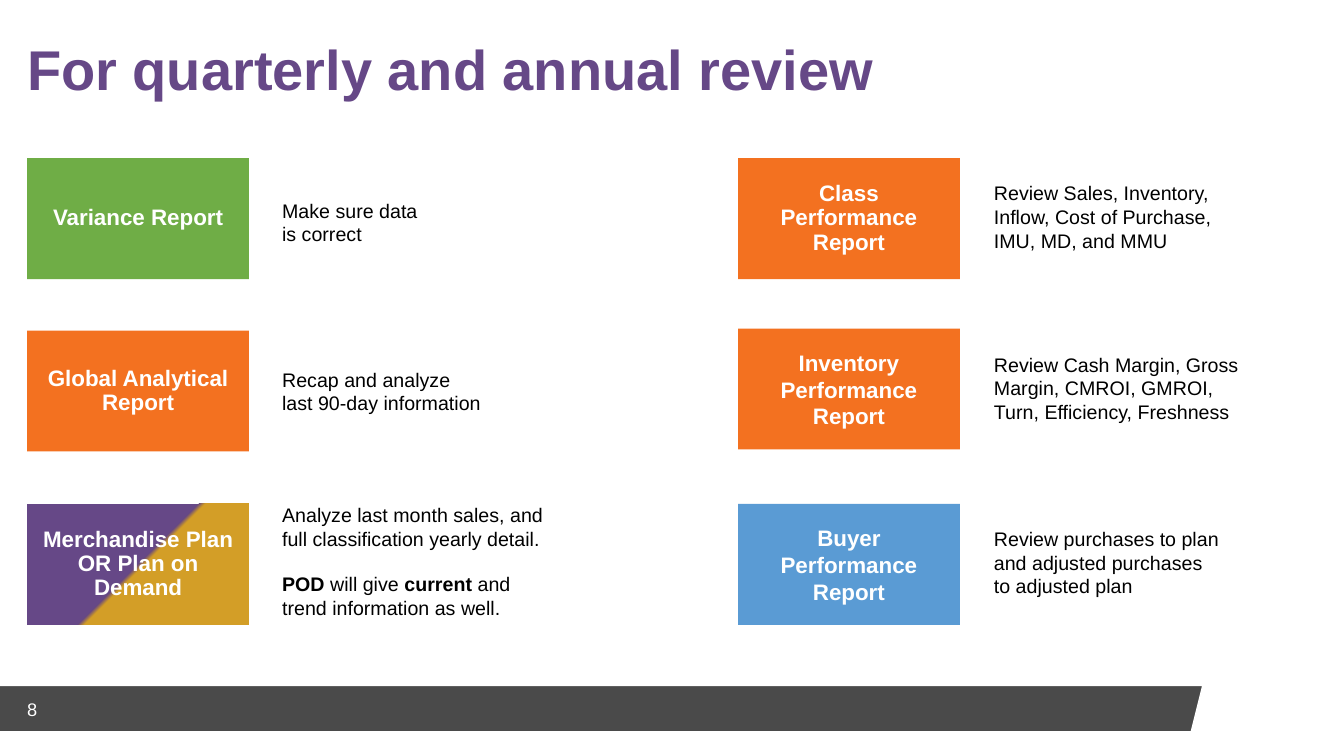
from copy import deepcopy
from dataclasses import dataclass

from lxml import etree
from pptx import Presentation
from pptx import util as u
from pptx.dml.color import RGBColor
from pptx.enum import shapes, text
from pptx.oxml.ns import qn

PX = 9144  # 100 px to the inch
PURPLE, GOLD, ORANGE = "664887", "D39E27", "F37120"
GREEN, BLUE, WHITE, BLACK = "6FAD46", "5A9BD4", "FFFFFF", "000000"
CARD_W, CARD_H = 220, 120
CARD_X, NOTE_X = (27, 732), (270, 976)


@dataclass
class Card:
    col: int
    top: int
    label: str
    fill: str | list[tuple[float, str]]
    spacing: float
    pad: int  # top and bottom inset


@dataclass
class Note:
    col: int
    top: int
    width: int
    height: int
    paragraphs: list[str]  # ** marks the start and end of bold


CARDS = [
    Card(0, 157, "Variance Report", GREEN, 0.9, 10),
    Card(0, 328, "Global Analytical Report", ORANGE, 0.9, 10),
    Card(0, 500, "Merchandise Plan OR Plan on Demand",
         [(0, PURPLE), (0.5, PURPLE), (0.52, GOLD), (1, GOLD)], 0.9, 10),
    Card(1, 157, "Class Performance Report", ORANGE, 0.9, 10),
    Card(1, 326, "Inventory Performance Report", ORANGE, 1.0, 5),
    Card(1, 500, "Buyer Performance Report", BLUE, 1.0, 5),
]

NOTES = [
    Note(0, 192, 166, 57, ["Make sure data is correct"]),
    Note(0, 360, 220, 57, ["Recap and analyze last 90-day information"]),
    Note(0, 494, 284, 128, [
        "Analyze last month sales, and full classification yearly detail.",
        "**POD** will give **current** and trend information as well."]),
    Note(1, 175, 253, 81,
         ["Review Sales, Inventory, Inflow, Cost of Purchase, IMU, MD, and MMU"]),
    Note(1, 345, 282, 81,
         ["Review Cash Margin, Gross Margin, CMROI, GMROI, Turn, Efficiency, Freshness"]),
    Note(1, 518, 243, 81,
         ["Review purchases to plan and adjusted purchases to adjusted plan"]),
]


def rgb(value: str) -> RGBColor:
    return RGBColor.from_string(value)


def box(*px: int) -> list[int]:
    return [n * PX for n in px]


def write(sp, paragraphs: list[str], size: int, color: str, *, bold=False,
          insets=(10, 5, 10, 5), anchor=text.MSO_ANCHOR.TOP,
          align=text.PP_ALIGN.LEFT, spacing=1.0) -> None:
    tf = sp.text_frame
    left, top, right, bottom = box(*insets)
    frame = {"word_wrap": True, "vertical_anchor": anchor, "margin_left": left,
             "margin_top": top, "margin_right": right, "margin_bottom": bottom}
    for name, value in frame.items():
        setattr(tf, name, value)
    for i, line in enumerate(paragraphs):
        p = tf.add_paragraph() if i else tf.paragraphs[0]
        p.alignment, p.line_spacing = align, spacing
        if i:
            p.space_before = u.Pt(16)
        for j, part in enumerate(line.split("**")):
            if not part:
                continue
            r = p.add_run()
            r.text = part
            font = {"name": "Arial", "size": u.Pt(size), "bold": bold or j % 2 == 1}
            for name, value in font.items():
                setattr(r.font, name, value)
            r.font.color.rgb = rgb(color)


def fill_gradient(sp, stops: list[tuple[float, str]]) -> None:
    sp.fill.gradient()
    sp.fill.gradient_angle = 315  # top left to bottom right
    gs_list = sp._element.spPr.find(".//" + qn("a:gsLst"))
    for gs in list(gs_list)[:len(stops) - 2]:
        gs_list.append(deepcopy(gs))
    for stop, (position, color) in zip(sp.fill.gradient_stops, stops):
        stop.position = position
        stop.color.rgb = rgb(color)


def add_card(s, card: Card) -> None:
    sp = s.shapes.add_shape(shapes.MSO_SHAPE.RECTANGLE,
                            *box(CARD_X[card.col], card.top, CARD_W, CARD_H))
    sp.shadow.inherit = False
    sp.line.fill.background()
    if isinstance(card.fill, str):
        sp.fill.solid()
        sp.fill.fore_color.rgb = rgb(card.fill)
    else:
        fill_gradient(sp, card.fill)
    write(sp, [card.label], 16, WHITE, bold=True,
          insets=(10, card.pad, 10, card.pad), anchor=text.MSO_ANCHOR.MIDDLE,
          align=text.PP_ALIGN.CENTER, spacing=card.spacing)


def add_note(s, note: Note) -> None:
    sp = s.shapes.add_textbox(
        *box(NOTE_X[note.col], note.top, note.width, note.height))
    write(sp, note.paragraphs, 14, BLACK)


def add_footer(s, number: str) -> None:
    sp = s.shapes.add_shape(shapes.MSO_SHAPE.PARALLELOGRAM,
                            *box(-21, 680, 1214, 46))
    sp.adjustments[0] = 0.25
    sp.shadow.inherit = False
    sp.fill.solid()
    sp.fill.fore_color.rgb = rgb(BLACK)
    color = sp._element.spPr.find(qn("a:solidFill")).find(qn("a:srgbClr"))
    etree.SubElement(color, qn("a:alpha"), val="71000")
    sp.line.color.rgb = rgb(WHITE)
    sp.line.width = u.Pt(1)
    label = s.shapes.add_textbox(*box(27, 685, 55, 37))
    write(label, [number], 13, WHITE, insets=(0, 0, 0, 0),
          anchor=text.MSO_ANCHOR.MIDDLE)


def main() -> None:
    prs = Presentation()
    prs.slide_width, prs.slide_height = box(1333, 750)
    s = prs.slides.add_slide(prs.slide_layouts[6])

    # Footer band and page number
    add_footer(s, "8")

    # Title
    title = s.shapes.add_textbox(*box(27, 42, 847, 65))
    write(title, ["For quarterly and annual review"], 40, PURPLE, bold=True,
          insets=(0, 0, 0, 10), spacing=0.9)

    # Reports and what each is for
    for card in CARDS:
        add_card(s, card)
    for note in NOTES:
        add_note(s, note)

    prs.save("out.pptx")


if __name__ == "__main__":
    main()
